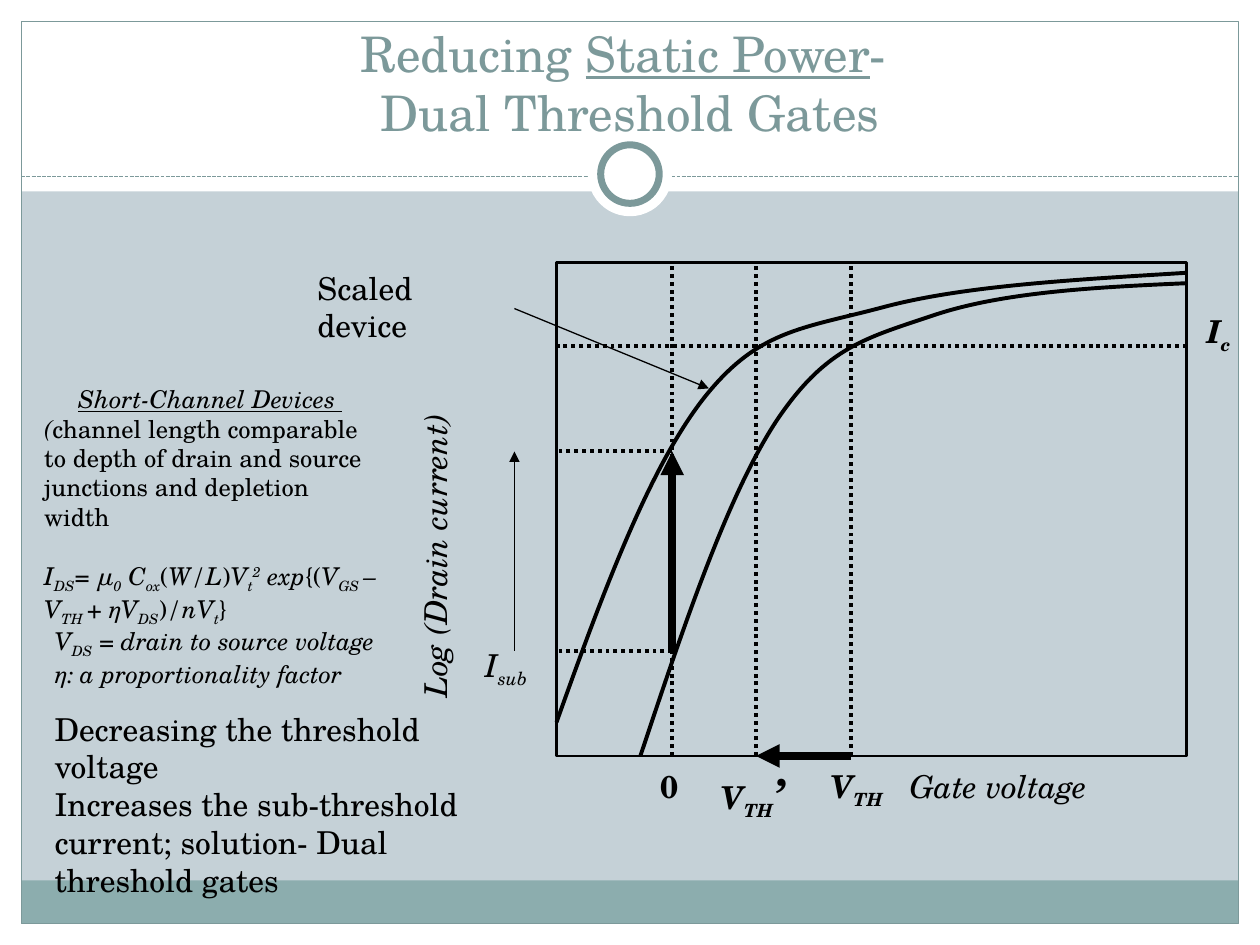
from lxml.etree import SubElement
from pptx import Presentation
from pptx.dml.color import RGBColor
from pptx.enum.dml import MSO_LINE
from pptx.enum.shapes import MSO_CONNECTOR, MSO_SHAPE
from pptx.enum.text import MSO_ANCHOR, MSO_AUTO_SIZE, PP_ALIGN
from pptx.oxml.ns import qn
from pptx.util import Cm, Pt

FONT = "TeX Gyre Schola"
BLACK = RGBColor(0x00, 0x00, 0x00)
WHITE = RGBColor(0xFF, 0xFF, 0xFF)
MIST = RGBColor(0xC5, 0xD1, 0xD7)
TEAL = RGBColor(0x7C, 0x99, 0x9A)
SEA = RGBColor(0x8C, 0xAD, 0xAE)
BASELINES = {"_": "-25000", "^": "30000"}


def add_block(slide, preset, box, fill=None, line=None, weight=0.75):
    """Draw a preset shape with an optional fill and outline."""
    block = slide.shapes.add_shape(preset, *map(Cm, box))
    block.shadow.inherit = False
    if fill is None:
        block.fill.background()
    else:
        block.fill.solid()
        block.fill.fore_color.rgb = fill
    if line is None:
        block.line.fill.background()
    else:
        block.line.color.rgb = line
        block.line.width = Pt(weight)


def add_rule(slide, start, end, weight, color=BLACK, dash=None, arrow=False):
    """Draw a straight line, dashed or with an arrowhead at its end."""
    rule = slide.shapes.add_connector(MSO_CONNECTOR.STRAIGHT, *map(Cm, start + end))
    rule.line.color.rgb = color
    rule.line.width = Pt(weight)
    if dash is not None:
        rule.line.dash_style = dash
    if arrow:
        SubElement(rule.line._get_or_add_ln(), qn("a:tailEnd"), type="triangle")
    SubElement(rule._element.spPr, qn("a:effectLst"))


def add_curve(slide, points):
    """Draw a chain of cubic curves from a start and triples of control points."""
    start, *rest = [tuple(map(Cm, point)) for point in points]
    builder = slide.shapes.build_freeform(*start)
    builder.add_line_segments(rest, close=False)
    curve = builder.convert_to_shape()
    curve.shadow.inherit = False
    curve.fill.background()
    curve.line.color.rgb = BLACK
    curve.line.width = Pt(2.25)
    segments = list(curve._element.iter(qn("a:lnTo")))
    outline = segments[0].getparent()
    for index in range(0, len(segments), 3):
        bezier = SubElement(outline, qn("a:cubicBezTo"))
        for segment in segments[index:index + 3]:
            bezier.append(segment[0])
            outline.remove(segment)


def add_runs(paragraph, runs, size, color=BLACK):
    """Add (text, style) runs; b, i, u set the face, _ and ^ the baseline."""
    for text, style in runs:
        run = paragraph.add_run()
        run.text = text
        run.font.name = FONT
        run.font.size = Pt(24 if "+" in style else size)
        run.font.color.rgb = color
        run.font.bold = "b" in style
        run.font.italic = "i" in style
        run.font.underline = "u" in style
        for mark, offset in BASELINES.items():
            if mark in style:
                run._r.get_or_add_rPr().set("baseline", offset)


def add_text(slide, box, paragraphs, size=18, wrap=True, rotation=0):
    """Add a text box holding one list of runs per paragraph."""
    textbox = slide.shapes.add_textbox(*map(Cm, box))
    textbox.rotation = rotation
    frame = textbox.text_frame
    frame.word_wrap = wrap
    frame.auto_size = MSO_AUTO_SIZE.SHAPE_TO_FIT_TEXT
    for index, runs in enumerate(paragraphs):
        paragraph = frame.add_paragraph() if index else frame.paragraphs[0]
        add_runs(paragraph, runs, size)
    return frame


def draw_frame(slide, left, top, width, height):
    """Draw the white margins, footer band, border and header ring."""
    margin, header = 0.43, 3.86
    right, bottom = left + width, top + height
    for box in ((left, bottom - margin, width, margin),
                (left, top, width, header),
                (left, top, margin, height),
                (right - margin, top, margin, height)):
        add_block(slide, MSO_SHAPE.RECTANGLE, box, WHITE)
    inner = width - 2 * margin
    add_block(slide, MSO_SHAPE.RECTANGLE,
              (left + margin, bottom - margin - 0.87, inner, 0.87), SEA)
    add_block(slide, MSO_SHAPE.RECTANGLE,
              (left + margin, top + margin, inner, height - 2 * margin), line=TEAL)
    add_rule(slide, (left + margin, top + 3.56), (right - margin, top + 3.56),
             0.75, TEAL, MSO_LINE.SQUARE_DOT)
    center_x, center_y = left + width / 2, top + 3.51
    for diameter, line in ((1.7, None), (1.18, TEAL)):
        add_block(slide, MSO_SHAPE.OVAL,
                  (center_x - diameter / 2, center_y - diameter / 2, diameter, diameter),
                  WHITE, line, 4)


def draw_title(slide, left, top, width, height):
    """Write the two-line heading, resting on the bottom of its box."""
    frame = slide.shapes.add_textbox(*map(Cm, (left, top, width, height))).text_frame
    frame.word_wrap = True
    frame.vertical_anchor = MSO_ANCHOR.BOTTOM
    heading = frame.paragraphs[0]
    heading.alignment = PP_ALIGN.CENTER
    add_runs(heading, [("Reducing ", ""), ("Static Power", "u"), ("- ", "")], 28, TEAL)
    heading.add_line_break()
    add_runs(heading, [("Dual Threshold Gates", "")], 28, TEAL)


def draw_notes(slide, left, top, width):
    """Write the short-channel definition, the current equation and the conclusion."""
    equation = [
        ("I", "i"), ("DS", "i_"), ("= μ", "i"), ("0", "i_"), (" C", "i"), ("ox", "i_"),
        ("(", ""), ("W/L", "i"), (")", ""), ("V", "i"), ("t", "i_"), ("2", "i^"),
        (" exp", "i"), ("{(", ""), ("V", "i"), ("GS ", "i_"), ("–V", "i"), ("TH ", "i_"),
        ("+ ηV", "i"), ("DS", "i_"), (")", ""), ("/nV", "i"), ("t", "i_"), ("}", "")]
    definition = add_text(slide, (left, top, width, 4.45), [
        [("Short-Channel Devices ", "iu")],
        [("(", "i"), ("channel length comparable to depth of drain and source "
                      "junctions and depletion width", "")],
        equation], 14)
    definition.paragraphs[0].alignment = PP_ALIGN.CENTER
    definition.paragraphs[2].space_before = Pt(16.8)
    add_text(slide, (left + 0.21, top + 4.87, width - 0.21, 1.45), [
        [("V", "i"), ("DS", "i_"), (" = drain to source voltage", "i")],
        [("η: a proportionality factor", "i")]], 14)
    add_text(slide, (left + 0.21, top + 6.56, width + 2.54, 3.33), [
        [("Decreasing the threshold voltage", "")],
        [("Increases the sub-threshold current; solution- Dual threshold gates", "")]])


def draw_current_plot(slide, left, top, width, height):
    """Draw drain current against gate voltage for normal and scaled devices."""
    zero, scaled_vth, vth = 2.33, 4.02, 5.93
    on_current, scaled_leak, leak = 1.69, 3.81, 7.83
    leak_x = -0.85

    def at(x, y):
        """Move a point of the plot onto the slide."""
        return left + x, top + y

    scaled_device = [(0, 9.27), (0.92, 6.69), (1.86, 4.16), (2.96, 2.75), (4.05, 1.36),
                     (4.94, 1.34), (6.56, 0.91), (8.18, 0.47), (10.44, 0.35), (width, 0.21)]
    normal_device = [(1.69, height), (2.57, 7.31), (3.46, 4.66), (4.45, 3.17), (5.45, 1.69),
                     (6.26, 1.52), (7.62, 1.06), (9, 0.6), (10.86, 0.5), (width, 0.42)]
    add_block(slide, MSO_SHAPE.RECTANGLE, (left, top, width, height), MIST, BLACK, 1.5)
    for curve in (scaled_device, normal_device):
        add_curve(slide, [at(*point) for point in curve])

    guides = [((x, height), (x, 0)) for x in (vth, scaled_vth, zero)]
    guides += [((end, y), (0, y)) for end, y in
               ((width, on_current), (zero, leak), (zero, scaled_leak))]
    for start, end in guides:
        add_rule(slide, at(*start), at(*end), 2.25, dash=MSO_LINE.ROUND_DOT)

    for start, end, weight in (((vth, height), (scaled_vth, height), 4.5),
                               ((zero, leak), (zero, scaled_leak), 4.5),
                               ((leak_x, 0.93), (3.07, 2.54), 0.75),
                               ((leak_x, leak), (leak_x, scaled_leak), 0.75)):
        add_rule(slide, at(*start), at(*end), weight, arrow=True)

    below = height + 0.1
    for x, y, label_width, runs, wrap, rotation in (
            (1.84, below, 0.97, [("0", "b")], False, 0),
            (3.06, below, 1.93, [("V", "bi"), ("TH", "bi_"), ("’", "bi+")], False, 0),
            (5.27, below, 1.68, [("V", "bi"), ("TH", "bi_")], False, 0),
            (6.87, below, 7.82, [("Gate voltage", "i")], True, 0),
            (-5.58, 5.38, 6.27, [("Log (Drain current)", "i")], False, 270),
            (-5.07, 0, 3.8, [("Scaled device", "")], True, 0),
            (12.86, 0.88, 1.04, [("I", "bi"), ("c", "bi_")], False, 0),
            (-1.69, 7.61, 1.42, [("I", "i"), ("sub", "i_")], False, 0)):
        add_text(slide, (*at(x, y), label_width, 1.02), [runs], wrap=wrap, rotation=rotation)


def main():
    """Build the dual threshold slide and save it."""
    deck = Presentation()
    deck.slide_width, deck.slide_height = Cm(25.4), Cm(19.05)
    slide = deck.slides.add_slide(deck.slide_layouts[6])
    slide.background.fill.solid()
    slide.background.fill.fore_color.rgb = MIST
    draw_frame(slide, 0, 0, 25.4, 19.05)
    draw_title(slide, 0.85, 0.85, 23.7, 2.12)
    draw_notes(slide, 0.64, 7.62, 7.2)
    draw_current_plot(slide, 11.22, 5.29, 12.7, 9.95)
    deck.save("out.pptx")


if __name__ == "__main__":
    main()
